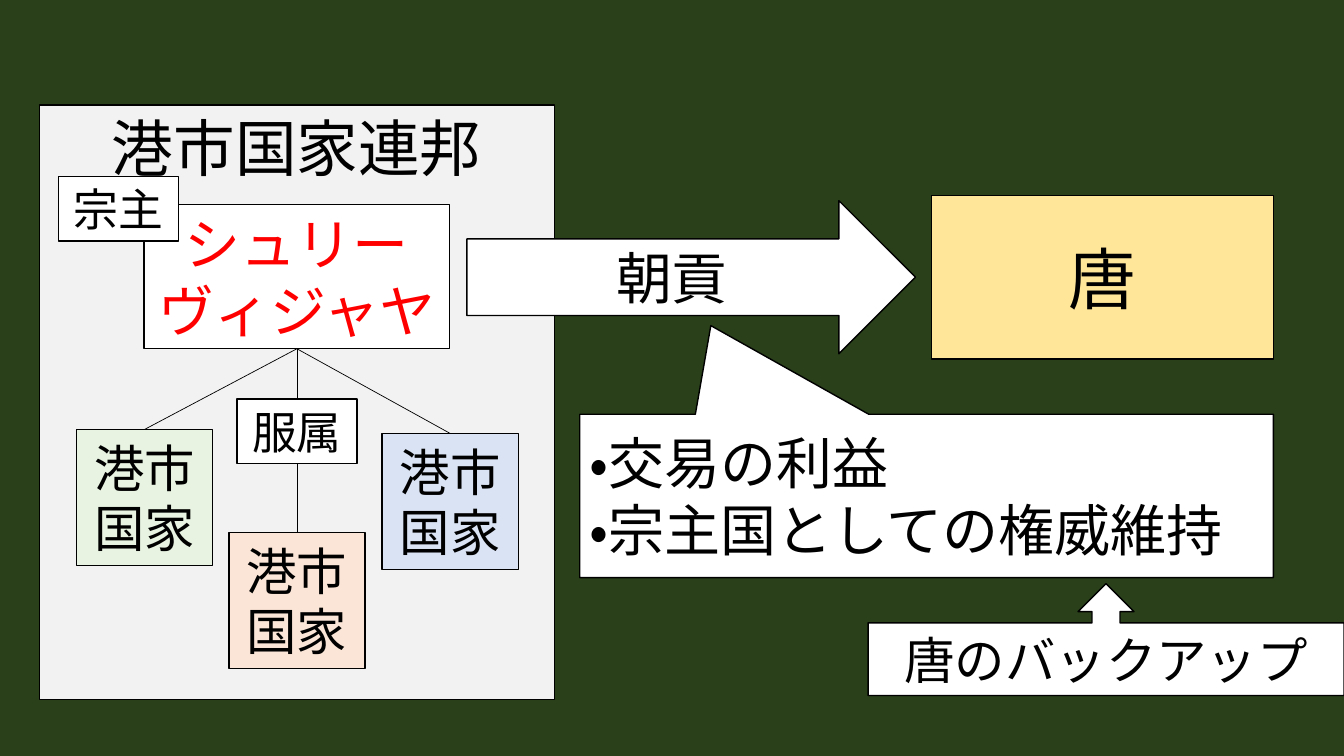
from dataclasses import dataclass

from lxml import etree
from pptx import Presentation
from pptx.dml.color import RGBColor
from pptx.enum.lang import MSO_LANGUAGE_ID
from pptx.enum.shapes import MSO_CONNECTOR, MSO_SHAPE
from pptx.enum.text import MSO_ANCHOR, PP_ALIGN
from pptx.oxml.ns import qn
from pptx.shapes.autoshape import Shape
from pptx.slide import Slide
from pptx.util import Emu, Pt

RECTANGLE = MSO_SHAPE.RECTANGLE
RIGHT_ARROW = MSO_SHAPE.RIGHT_ARROW
SPEECH = MSO_SHAPE.RECTANGULAR_CALLOUT
UP_ARROW_CALLOUT = MSO_SHAPE.UP_ARROW_CALLOUT
STRAIGHT = MSO_CONNECTOR.STRAIGHT
TOP, MIDDLE = MSO_ANCHOR.TOP, MSO_ANCHOR.MIDDLE
LEFT, CENTER = PP_ALIGN.LEFT, PP_ALIGN.CENTER
JAPANESE = MSO_LANGUAGE_ID.JAPANESE

EMU_PER_PX = 9144  # 100 px to the inch
FONT = "Calibri"
BLACK, WHITE, RED = "000000", "FFFFFF", "FF0000"
TOP_SIDE, BOTTOM_SIDE = 0, 2


@dataclass(frozen=True)
class Box:
    text: str
    left: int
    top: int
    width: int
    height: int
    size: int
    fill: str = WHITE
    color: str = BLACK
    preset: MSO_SHAPE = RECTANGLE
    anchor: MSO_ANCHOR = MIDDLE
    align: PP_ALIGN = CENTER
    adjustments: tuple[float, ...] = ()


FEDERATION = Box("港市国家連邦", 39, 104, 511, 590, 44, fill="F2F2F2", anchor=TOP)
SRIVIJAYA = Box("シュリーヴィジャヤ", 143, 203, 303, 143, 40, color=RED)
PORT_STATES = [
    Box("港市国家", left, top, 135, 135, 36, fill=fill)
    for left, top, fill in (
        (76, 426, "E8F3E1"),
        (227, 528, "FBE5D6"),
        (379, 430, "DAE3F3"),
    )
]
FOREGROUND = [
    Box("服属", 235, 396, 119, 64, 32),
    Box("朝貢", 463, 199, 445, 152, 40, preset=RIGHT_ARROW),
    Box("唐", 924, 194, 339, 162, 48, fill="FFE699"),
    Box("・交易の利益\n・宗主国としての権威維持", 575, 411, 688, 162, 40,
        preset=SPEECH, align=LEFT, adjustments=(-0.311, -1.043)),
    Box("宗主", 58, 175, 119, 64, 32),
    Box("唐のバックアップ", 861, 579, 472, 111, 36, preset=UP_ARROW_CALLOUT),
]


def px(length: int) -> Emu:
    return Emu(length * EMU_PER_PX)


def rgb(color: str) -> RGBColor:
    return RGBColor.from_string(color)


def draw_box(slide: Slide, box: Box) -> Shape:
    shape = slide.shapes.add_shape(
        box.preset, px(box.left), px(box.top), px(box.width), px(box.height))
    for index, value in enumerate(box.adjustments):
        shape.adjustments[index] = value
    shape.shadow.inherit = False
    shape.fill.solid()
    shape.fill.fore_color.rgb = rgb(box.fill)
    shape.line.color.rgb = rgb(BLACK)
    shape.line.width = Pt(1)

    text_frame = shape.text_frame
    text_frame.word_wrap = True
    text_frame.vertical_anchor = box.anchor
    text_frame.text = box.text
    for paragraph in text_frame.paragraphs:
        paragraph.alignment = box.align
        for run in paragraph.runs:
            run.font.name = FONT
            run.font.size = Pt(box.size)
            run.font.color.rgb = rgb(box.color)
            run.font.language_id = JAPANESE
    return shape


def draw_tie(slide: Slide, overlord: Shape, vassal: Shape) -> None:
    connector = slide.shapes.add_connector(STRAIGHT, 0, 0, 0, 0)
    connector.begin_connect(overlord, BOTTOM_SIDE)
    connector.end_connect(vassal, TOP_SIDE)
    connector.line.color.rgb = rgb(BLACK)
    connector.line.width = Pt(0.5)
    etree.SubElement(connector.element.spPr, qn("a:effectLst"))


def main() -> None:
    presentation = Presentation()
    presentation.slide_width, presentation.slide_height = px(1333), px(750)
    slide = presentation.slides.add_slide(presentation.slide_layouts[6])
    slide.background.fill.solid()
    slide.background.fill.fore_color.rgb = rgb("29401A")

    # Federation of port states with its overlord
    draw_box(slide, FEDERATION)
    srivijaya = draw_box(slide, SRIVIJAYA)
    port_states = [draw_box(slide, state) for state in PORT_STATES]
    for state in port_states:
        draw_tie(slide, srivijaya, state)

    # Labels, tribute to Tang and its benefits
    for box in FOREGROUND:
        draw_box(slide, box)

    presentation.save("out.pptx")


if __name__ == "__main__":
    main()
